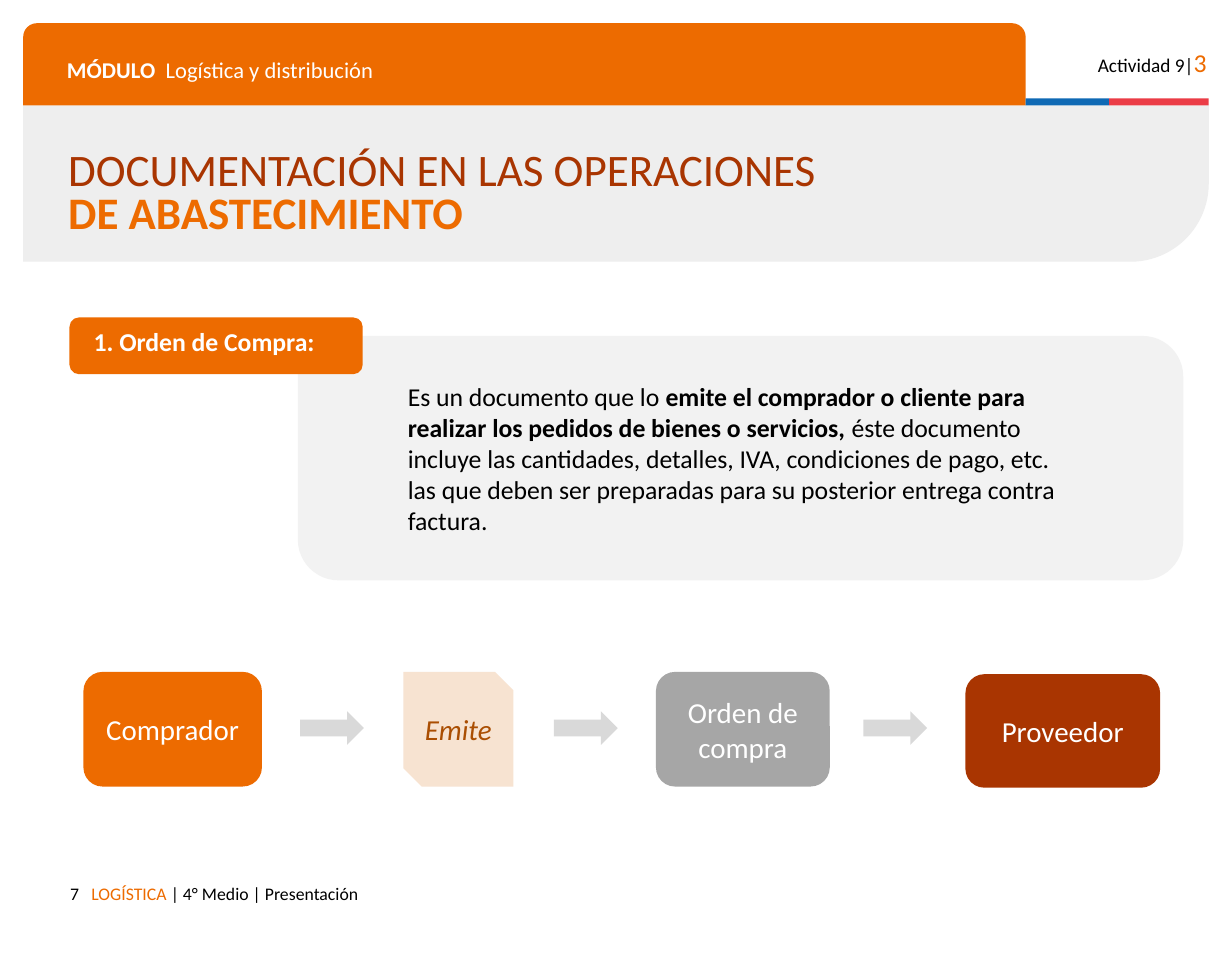
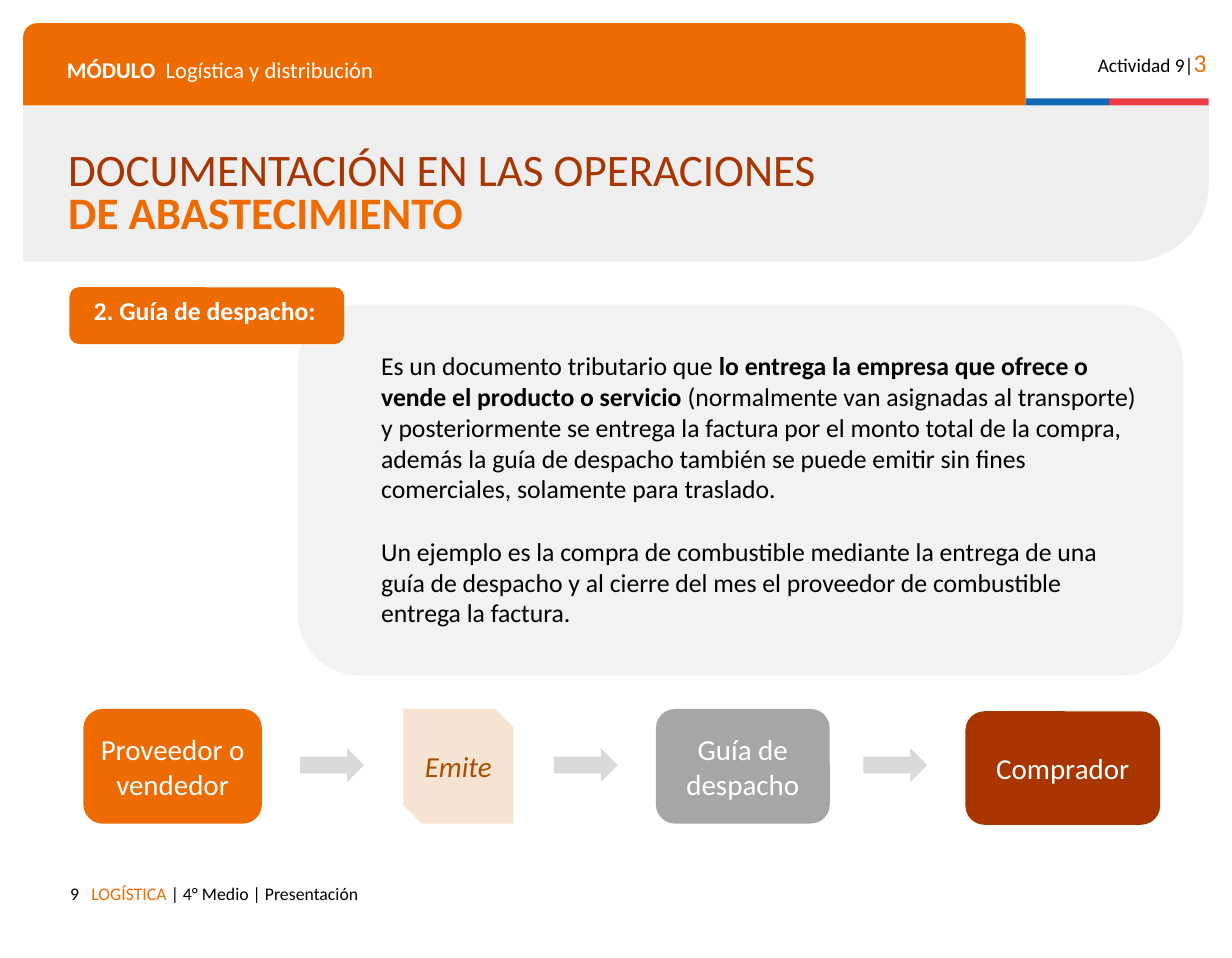
from pptx import Presentation
from pptx import util as u
from pptx.dml.color import RGBColor
from pptx.enum import shapes, text

ORANGE, RUST, BLACK, WHITE = "ED6B00", "A93501", "000000", "FFFFFF"
SH = shapes.MSO_SHAPE
LEFT, CENTER, RIGHT = text.PP_ALIGN.LEFT, text.PP_ALIGN.CENTER, text.PP_ALIGN.RIGHT
TOP, MIDDLE = text.MSO_ANCHOR.TOP, text.MSO_ANCHOR.MIDDLE


def add_block(s, at, kind, fill, adj=()):
    sp = s.shapes.add_shape(kind, *map(u.Inches, at))
    sp.shadow.inherit = False
    sp.fill.solid()
    sp.fill.fore_color.rgb = RGBColor.from_string(fill)
    sp.line.fill.background()
    for i, value in enumerate(adj):
        sp.adjustments[i] = value
    return sp


def write(sp, paras, inset=0.1, align=LEFT, anchor=TOP, **para_format):
    """Each paragraph is a list of runs: (text, size, colour, font flags)."""
    tf = sp.text_frame
    tf.word_wrap, tf.vertical_anchor = True, anchor
    tf.margin_left = tf.margin_right = u.Inches(0.1)
    tf.margin_top = tf.margin_bottom = u.Inches(inset)
    for i, runs in enumerate(paras):
        p = tf.paragraphs[0] if i == 0 else tf.add_paragraph()
        p.alignment = align
        for name, value in para_format.items():
            if name != "space_before" or i > 0:
                setattr(p, name, value)
        for content, size, colour, *flags in runs:
            r = p.add_run()
            r.text = content
            r.font.name, r.font.size = "Calibri", u.Pt(size)
            r.font.color.rgb = RGBColor.from_string(colour)
            for flag in flags:
                setattr(r.font, flag, True)


# What every slide shares: bands, then texts
bands = [
    ((0.2, 0.91, 10.23, 1.35), SH.ROUND_1_RECTANGLE, "EEEEEE", [0.5]),
    ((0.2, 0.2, 8.65, 0.71), SH.ROUND_2_SAME_RECTANGLE, ORANGE, [0.167, 0]),
    ((8.85, 0.85, 0.72, 0.06), SH.RECTANGLE, "0F69B4"),
    ((9.57, 0.85, 0.86, 0.06), SH.RECTANGLE, "EB3C46"),
]
shared_texts = [
    ((9.23, 0.3, 1.28, 0.38),
     [[("Actividad 9|", 12, BLACK), ("3", 16, ORANGE)]], {"align": RIGHT}),
    ((0.48, 0.38, 8.14, 0.35),
     [[("MÓDULO", 14, WHITE, "bold"), ("  Logística y distribución", 14, WHITE)]], {}),
    ((0.69, 7.53, 7.14, 0.38),
     [[("LOGÍSTICA ", 11, ORANGE), ("| 4° Medio | Presentación", 11, BLACK)]], {}),
    ((0.49, 1.51, 9.79, 0.35),
     [[("DOCUMENTACIÓN EN LAS OPERACIONES", 28, RUST)],
      [("DE ABASTECIMIENTO", 28, ORANGE, "bold")]],
     {"anchor": MIDDLE, "line_spacing": 0.8}),
]

# Flow diagram: left, width, drop, height, shape, adjustments, fill, text colour, flags
steps = [
    (0.72, 1.54, 0, 0.99, SH.ROUNDED_RECTANGLE, [0.167], ORANGE, WHITE, []),
    (3.48, 0.95, 0, 0.99, SH.SNIP_2_DIAG_RECTANGLE, [0, 0.167], "F7E3D1", "AA4E02", ["italic"]),
    (5.66, 1.5, 0, 0.99, SH.ROUNDED_RECTANGLE, [0.167], "A6A6A6", WHITE, []),
    (8.33, 1.68, 0.02, 0.98, SH.ROUNDED_RECTANGLE, [0.167], RUST, WHITE, []),
]
arrow_lefts = [2.59, 4.78, 7.45]

# What differs from slide to slide
pages = [
    {"number": "7", "heading": "1. Orden de Compra:",
     "tab": (0.6, 2.74, 2.53, 0.49), "panel": (2.57, 2.9, 7.64, 2.11),
     "body_at": (3.42, 3.24, 5.92, 1.45), "flow_top": 5.8,
     "body": [[
         ("Es un documento que lo ", 16, BLACK),
         ("emite el comprador o cliente para realizar los pedidos de bienes o servicios, ",
          16, BLACK, "bold"),
         ("éste documento incluye las cantidades, detalles, IVA, condiciones de pago, etc. "
          "las que deben ser preparadas para su posterior entrega contra factura.", 16, BLACK)]],
     "labels": ["Comprador", "Emite", "Orden de compra", "Proveedor"]},
    {"number": "9", "heading": "2. Guía de despacho:",
     "tab": (0.6, 2.48, 2.37, 0.49), "panel": (2.57, 2.63, 7.64, 3.2),
     "body_at": (3.19, 2.97, 6.78, 2.52), "flow_top": 6.12,
     "body": [[
         ("Es un documento tributario que ", 16, BLACK),
         ("lo entrega la empresa que ofrece o vende el producto o servicio ", 16, BLACK, "bold"),
         ("(normalmente van asignadas al transporte) y posteriormente se entrega la factura "
          "por el monto total de la compra, además la guía de despacho también se puede emitir "
          "sin fines comerciales, solamente para traslado.", 16, BLACK)],
         [("Un ejemplo es la compra de combustible mediante la entrega de una guía de despacho "
           "y al cierre del mes el proveedor de combustible entrega la factura.", 16, BLACK)]],
     "labels": ["Proveedor o vendedor", "Emite", "Guía de despacho", "Comprador"]},
]

prs = Presentation()
prs.slide_width, prs.slide_height = u.Inches(10.63), u.Inches(8.27)

for page in pages:
    s = prs.slides.add_slide(prs.slide_layouts[6])

    # Header, title and footer
    header = [add_block(s, *band) for band in bands]
    header[0]._element.spPr.xfrm.set("flipV", "1")  # rounded corner at bottom right
    for at, paras, options in shared_texts:
        write(s.shapes.add_textbox(*map(u.Inches, at)), paras, **options)
    number = s.shapes.add_textbox(*map(u.Inches, (0.2, 7.53, 0.58, 0.29)))
    write(number, [[(page["number"], 11, BLACK)]], align=RIGHT)

    # Definition panel with its heading tab
    add_block(s, page["panel"], SH.ROUNDED_RECTANGLE, "F2F2F2")
    body = s.shapes.add_textbox(*map(u.Inches, page["body_at"]))
    write(body, page["body"], inset=0.05, space_before=u.Pt(19.5))
    add_block(s, page["tab"], SH.ROUNDED_RECTANGLE, ORANGE)
    heading = s.shapes.add_textbox(*map(u.Inches, (0.71, page["tab"][1] + 0.02, 3.47, 0.37)))
    write(heading, [[(page["heading"], 16, WHITE, "bold")]], inset=0.05)

    # Flow of boxes and arrows
    top = page["flow_top"]
    for step, label in zip(steps, page["labels"]):
        left, width, drop, height, kind, adj, fill, colour, flags = step
        sp = add_block(s, (left, top + drop, width, height), kind, fill, adj)
        write(sp, [[(label, 18, colour, *flags)]], inset=0.05, align=CENTER, anchor=MIDDLE)
    for left in arrow_lefts:
        add_block(s, (left, top + 0.34, 0.55, 0.29), SH.RIGHT_ARROW, "D9D9D9", [0.5, 0.5])

prs.save("out.pptx")
